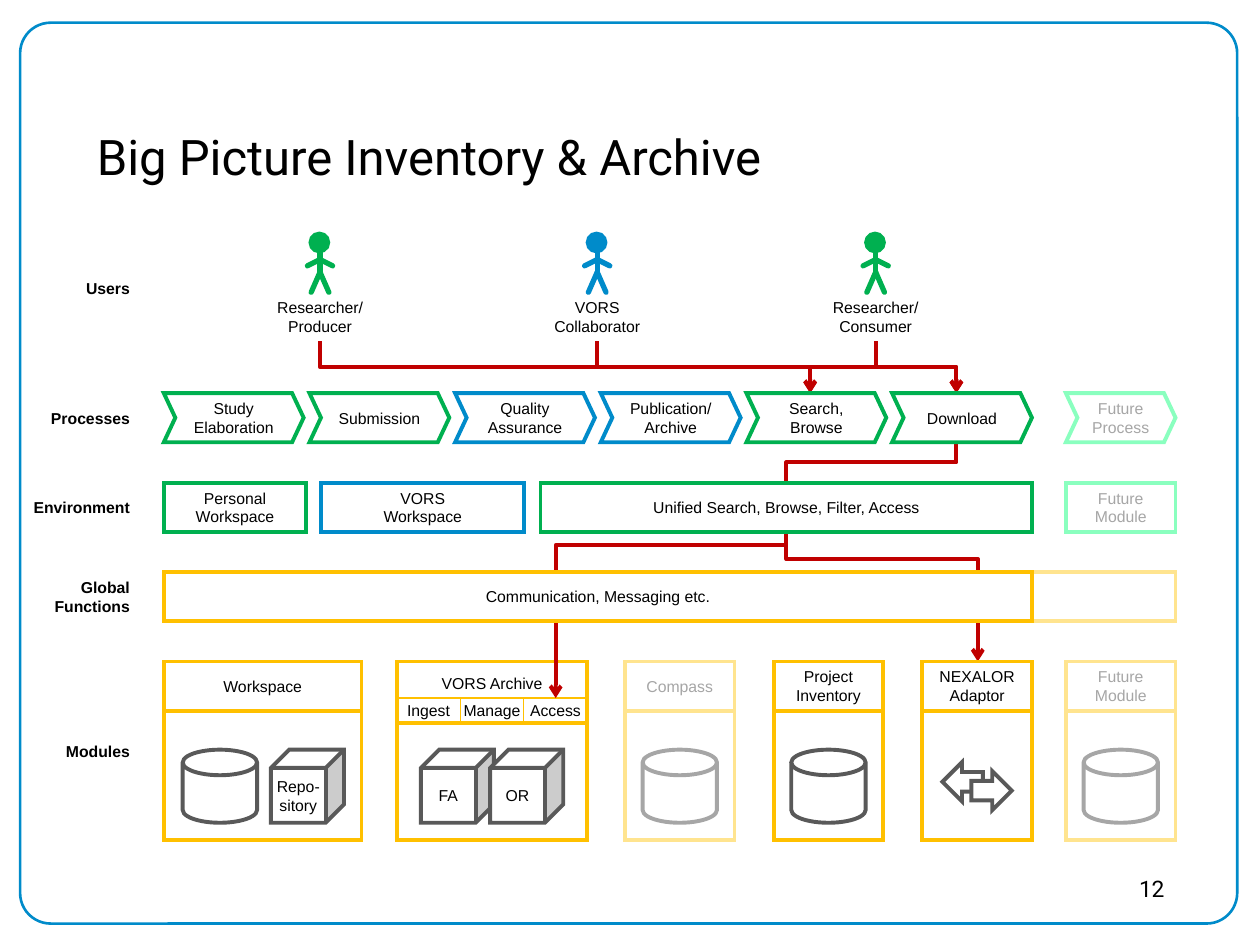
from dataclasses import dataclass

import lxml.etree
import pptx
import pptx.dml.color
import pptx.enum.shapes
import pptx.enum.text
import pptx.oxml.ns
import pptx.shapes.autoshape
import pptx.shapes.connector
import pptx.slide
import pptx.text.text
import pptx.util

Inches = pptx.util.Inches
RGBColor = pptx.dml.color.RGBColor
SHAPE = pptx.enum.shapes.MSO_SHAPE
CONNECTOR = pptx.enum.shapes.MSO_CONNECTOR
ALIGN = pptx.enum.text.PP_ALIGN
ANCHOR = pptx.enum.text.MSO_ANCHOR
qn = pptx.oxml.ns.qn

BLACK = RGBColor(0x00, 0x00, 0x00)
WHITE = RGBColor(0xFF, 0xFF, 0xFF)
BLUE = RGBColor(0x00, 0x8B, 0xCA)
GREEN = RGBColor(0x00, 0xB0, 0x50)
PALE_GREEN = RGBColor(0x8A, 0xFF, 0xBF)
GOLD = RGBColor(0xFF, 0xC0, 0x00)
PALE_GOLD = RGBColor(0xFF, 0xE4, 0x8F)
RED = RGBColor(0xC0, 0x00, 0x00)
DARK_GRAY = RGBColor(0x59, 0x59, 0x59)
GRAY = RGBColor(0xA6, 0xA6, 0xA6)

LEFT, MAIN_RIGHT, FUTURE_LEFT = 1.3, 8.19, 8.46
NARROW = 0.87
ROW = 0.39
USERS, PROCESSES, ENVIRONMENT, FUNCTIONS, MODULES = 1.86, 3.12, 3.83, 4.54, 5.25
MODULE_HEIGHT = 1.42
SYMBOL_TOP = 5.95
PADDING = (0.11, 0.06, 0.11, 0.06)
NO_PADDING = (0, 0, 0, 0)


@dataclass
class Cell:
    text: str
    left: float
    width: float
    line: RGBColor
    color: RGBColor = BLACK


@dataclass
class Person:
    center: float
    color: RGBColor
    label: str


@dataclass
class Wire:
    start: tuple[float, float]
    end: tuple[float, float]
    bend: float = 0.5
    arrow: bool = True


def write(frame: pptx.text.text.TextFrame, text: str, *, size: float = 9, font: str = "Arial",
          color: RGBColor = BLACK, bold: bool = False, align: ALIGN = ALIGN.CENTER,
          anchor: ANCHOR = ANCHOR.MIDDLE, padding: tuple = PADDING, wrap: bool = True) -> None:
    frame.text = text
    frame.word_wrap = wrap
    frame.vertical_anchor = anchor
    (frame.margin_left, frame.margin_top,
     frame.margin_right, frame.margin_bottom) = map(Inches, padding)
    for para in frame.paragraphs:
        para.alignment = align
        for span in para.runs:
            span.font.size = pptx.util.Pt(size)
            span.font.name = font
            span.font.bold = bold
            span.font.color.rgb = color


def add_text(page: pptx.slide.Slide, at: tuple, text: str, **style) -> None:
    box = page.shapes.add_textbox(*map(Inches, at))
    write(box.text_frame, text, **style)


def add_box(page: pptx.slide.Slide, kind: SHAPE, at: tuple, line: RGBColor, *,
            fill: RGBColor | None = WHITE, weight: float = 2.25, adjust: float | None = None,
            text: str = "", **style) -> pptx.shapes.autoshape.Shape:
    box = page.shapes.add_shape(kind, *map(Inches, at))
    box.shadow.inherit = False
    if fill is None:
        box.fill.background()
    else:
        box.fill.solid()
        box.fill.fore_color.rgb = fill
    box.line.color.rgb = line
    box.line.width = pptx.util.Pt(weight)
    outline = box.element.spPr.find(qn("a:ln"))
    lxml.etree.SubElement(outline, qn("a:miter"), lim="800000")
    if adjust is not None:
        box.adjustments[0] = adjust
    if text:
        write(box.text_frame, text, **style)
    return box


def add_line(page: pptx.slide.Slide, kind: CONNECTOR, start: tuple, end: tuple,
             color: RGBColor, weight: float) -> pptx.shapes.connector.Connector:
    line = page.shapes.add_connector(kind, *map(Inches, (*start, *end)))
    line.line.color.rgb = color
    line.line.width = pptx.util.Pt(weight)
    lxml.etree.SubElement(line.element.spPr, qn("a:effectLst"))
    return line


def add_wire(page: pptx.slide.Slide, wire: Wire) -> None:
    (x1, y1), (x2, y2) = wire.start, wire.end
    middle_x, middle_y = (x1 + x2) / 2, (y1 + y2) / 2
    half_width, half_height = (y2 - y1) / 2, abs(x2 - x1) / 2
    side = 1 if x2 > x1 else -1
    line = add_line(page, CONNECTOR.ELBOW,
                    (middle_x + side * half_width, middle_y - half_height),
                    (middle_x - side * half_width, middle_y + half_height), RED, 2.25)
    properties = line.element.spPr
    turn = 270 if side > 0 else 90
    properties.find(qn("a:xfrm")).set("rot", str(turn * 60000))
    guides = properties.find(qn("a:prstGeom")).get_or_add_avLst()
    lxml.etree.SubElement(guides, qn("a:gd"), name="adj1", fmla=f"val {round(wire.bend * 100000)}")
    if wire.arrow:
        lxml.etree.SubElement(properties.find(qn("a:ln")), qn("a:tailEnd"), type="arrow")


def add_person(page: pptx.slide.Slide, person: Person) -> None:
    x = person.center
    add_box(page, SHAPE.OVAL, (x - 0.07, USERS, 0.13, 0.13), person.color,
            fill=person.color, weight=3)
    neck, shoulder, hip = (x, 2.0), (x, 2.06), (x, 2.16)
    limbs = [(neck, hip)]
    for side in (-1, 1):
        limbs += [(hip, (x + side * 0.07, 2.32)), (shoulder, (x + side * 0.1, 2.11))]
    for start, end in limbs:
        limb = add_line(page, CONNECTOR.STRAIGHT, start, end, person.color, 3)
        limb.element.spPr.find(qn("a:ln")).set("cap", "rnd")
    add_text(page, (x - 0.55, 2.32, 1.1, ROW), person.label, wrap=False)


def add_cell(page: pptx.slide.Slide, cell: Cell, top: float, kind: SHAPE = SHAPE.RECTANGLE,
             adjust: float | None = None, padding: tuple = PADDING) -> None:
    add_box(page, kind, (cell.left, top, cell.width, ROW), cell.line, adjust=adjust,
            text=cell.text, color=cell.color, padding=padding)


def add_module(page: pptx.slide.Slide, cell: Cell) -> None:
    add_box(page, SHAPE.RECTANGLE, (cell.left, MODULES, cell.width, MODULE_HEIGHT), cell.line)
    add_cell(page, cell, MODULES, padding=NO_PADDING)


def add_can(page: pptx.slide.Slide, left: float, line: RGBColor = DARK_GRAY) -> None:
    add_box(page, SHAPE.CAN, (left, SYMBOL_TOP, 0.59, 0.58), line, adjust=0.35)


def add_cube(page: pptx.slide.Slide, left: float, text: str) -> None:
    add_box(page, SHAPE.CUBE, (left, SYMBOL_TOP, 0.58, 0.58), DARK_GRAY,
            text=text, padding=NO_PADDING)


def add_archive(page: pptx.slide.Slide) -> None:
    left, width = 3.15, 1.51
    add_box(page, SHAPE.RECTANGLE, (left, MODULES, width, MODULE_HEIGHT), GOLD)
    add_cube(page, 3.34, "FA")
    add_cube(page, 3.89, "OR")
    for index, text in enumerate(("Ingest", "Manage", "Access")):
        add_box(page, SHAPE.RECTANGLE, (left + index * width / 3, 5.54, width / 3, 0.2), GOLD,
                weight=0.75, text=text, padding=NO_PADDING)
    add_box(page, SHAPE.RECTANGLE, (left, MODULES, width, 0.49), GOLD, fill=None,
            text="VORS Archive", padding=(0, 0, 0, 0.15))


def main() -> None:
    deck = pptx.Presentation()
    deck.slide_width, deck.slide_height = Inches(10), Inches(7.5)
    page = deck.slides.add_slide(deck.slide_layouts[6])

    add_box(page, SHAPE.ROUNDED_RECTANGLE, (0.16, 0.18, 9.66, 7.15), BLUE,
            fill=None, weight=1.5, adjust=0.034)
    add_text(page, (0.67, 0.9, 8.67, 0.68), "Big Picture Inventory & Archive", size=28,
             font="Roboto", align=ALIGN.LEFT, padding=(0.1, 0.05, 0.1, 0.05))

    add_archive(page)
    people = [Person(2.54, GREEN, "Researcher/\vProducer"),
              Person(4.74, BLUE, "VORS Collaborator"),
              Person(6.95, GREEN, "Researcher/\vConsumer")]
    producer, collaborator, consumer = [(person.center, 2.71) for person in people]
    search, download, access = (6.43, PROCESSES), (7.59, PROCESSES), (6.24, ENVIRONMENT + ROW)
    for wire in (Wire(producer, search), Wire(collaborator, download),
                 Wire(consumer, search), Wire(consumer, download),
                 Wire((7.59, PROCESSES + ROW), (6.24, ENVIRONMENT), arrow=False),
                 Wire(access, (4.41, 5.54), bend=0.08),
                 Wire(access, (7.76, MODULES), bend=0.21)):
        add_wire(page, wire)
    for person in people:
        add_person(page, person)

    step, chevron = 1.156, 1.11
    processes = (("Study\nElaboration", GREEN), ("Submission", GREEN),
                 ("Quality Assurance", BLUE), ("Publication/Archive", BLUE),
                 ("Search, Browse", GREEN), ("Download", GREEN))
    process_cells = [Cell(text, LEFT + index * step, chevron, line)
                     for index, (text, line) in enumerate(processes)]
    process_cells.append(Cell("Future Process", FUTURE_LEFT, NARROW, PALE_GREEN, GRAY))
    for cell in process_cells:
        add_cell(page, cell, PROCESSES, SHAPE.CHEVRON, adjust=0.235)

    for cell in (Cell("Personal\nWorkspace", LEFT, 1.13, GREEN),
                 Cell("VORS\nWorkspace", 2.55, 1.61, BLUE),
                 Cell("Unified Search, Browse, Filter, Access", 4.29, 3.9, GREEN),
                 Cell("Future\nModule", FUTURE_LEFT, NARROW, PALE_GREEN, GRAY)):
        add_cell(page, cell, ENVIRONMENT)

    for cell in (Cell("", 8.03, 1.3, PALE_GOLD),
                 Cell("Communication, Messaging etc.", LEFT, MAIN_RIGHT - LEFT, GOLD)):
        add_cell(page, cell, FUNCTIONS)

    for cell in (Cell("Workspace", LEFT, 1.57, GOLD),
                 Cell("Compass", 4.96, NARROW, PALE_GOLD, GRAY),
                 Cell("Project\nInventory", 6.14, NARROW, GOLD),
                 Cell("NEXALOR\nAdaptor", 7.32, NARROW, GOLD),
                 Cell("Future\nModule", FUTURE_LEFT, NARROW, PALE_GOLD, GRAY)):
        add_module(page, cell)
    add_cube(page, 2.15, "Repo-\vsitory")
    for left, line in ((1.45, DARK_GRAY), (5.1, GRAY), (6.28, DARK_GRAY), (8.6, GRAY)):
        add_can(page, left, line)
    for left, top, turn in ((7.48, 6.05, 0), (7.71, 6.12, 180)):
        arrow = add_box(page, SHAPE.LEFT_ARROW, (left, top, 0.32, 0.31), DARK_GRAY)
        arrow.rotation = turn

    for text, top, height in (("Users", USERS, 0.85), ("Processes", PROCESSES, ROW),
                              ("Environment", ENVIRONMENT, ROW),
                              ("Global\nFunctions", FUNCTIONS, ROW),
                              ("Modules", MODULES, MODULE_HEIGHT)):
        add_text(page, (0.04, top, 1.1, height), text, bold=True, align=ALIGN.RIGHT)
    add_text(page, (8.42, 6.89, 0.92, 0.31), "12", size=13, font="Roboto", align=ALIGN.RIGHT,
             anchor=ANCHOR.TOP, padding=(0.1, 0.05, 0.1, 0.05))

    deck.save("out.pptx")


if __name__ == "__main__":
    main()
